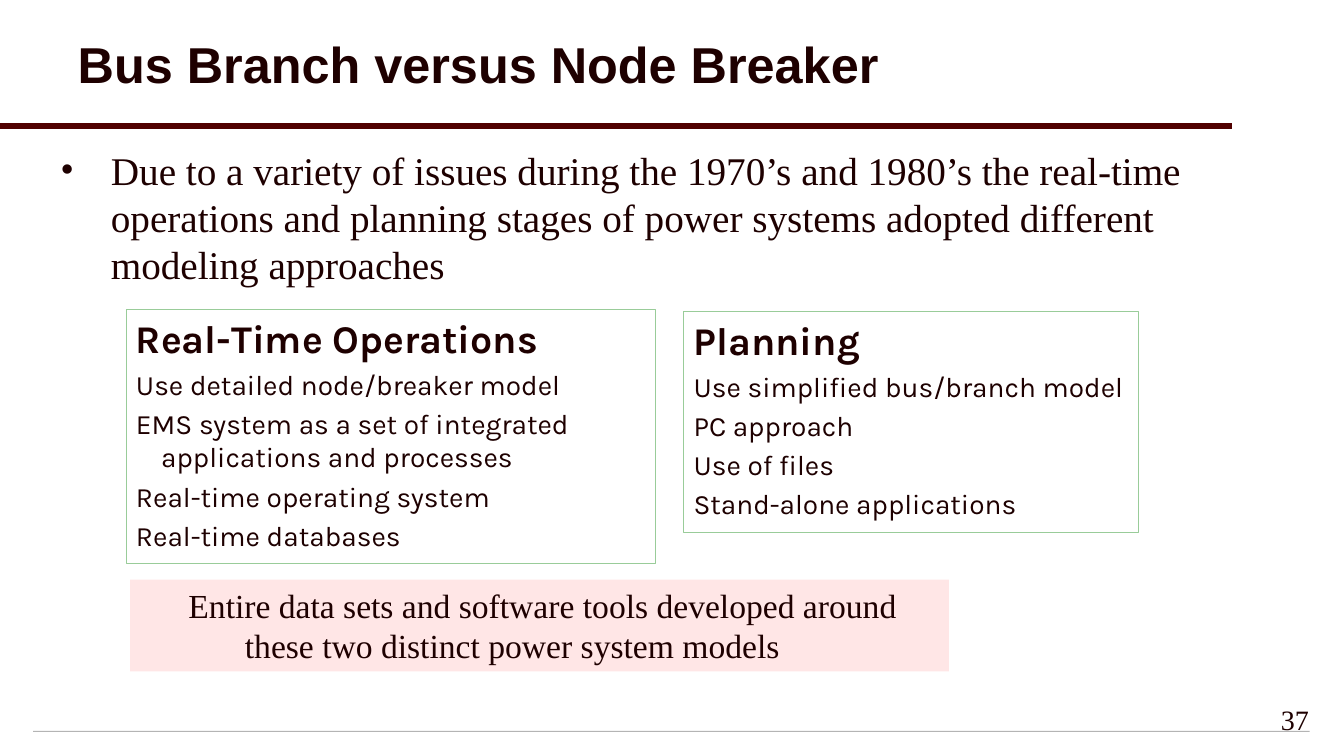
from lxml import etree
from pptx import Presentation
from pptx.dml.color import RGBColor
from pptx.enum.shapes import MSO_CONNECTOR, MSO_SHAPE
from pptx.enum.text import MSO_ANCHOR, MSO_AUTO_SIZE, PP_ALIGN
from pptx.oxml.ns import qn
from pptx.util import Inches, Pt

RECTANGLE = MSO_SHAPE.RECTANGLE
STRAIGHT = MSO_CONNECTOR.STRAIGHT
TOP, MIDDLE = MSO_ANCHOR.TOP, MSO_ANCHOR.MIDDLE
LEFT, RIGHT = PP_ALIGN.LEFT, PP_ALIGN.RIGHT
NO_AUTOFIT = MSO_AUTO_SIZE.NONE

WIDTH, HEIGHT = 13.33, 7.5
INK, MAROON, GREEN, PINK, GREY = "1E0000", "500000", "99CC99", "FFE6E6", "B4B4B4"
SERIF, SANS, CARD_FONT = "Times New Roman", "Arial", "Karla"

OPERATIONS = [
    "Real-Time Operations",
    "Use detailed node/breaker model",
    "EMS system as a set of integrated applications and processes",
    "Real-time operating system",
    "Real-time databases",
]
PLANNING = [
    "Planning",
    "Use simplified bus/branch model",
    "PC approach",
    "Use of files",
    "Stand-alone applications",
]


def color(value):
    return RGBColor.from_string(value)


def place(shape, left, top, width, height):
    shape.left, shape.top = Inches(left), Inches(top)
    shape.width, shape.height = Inches(width), Inches(height)


def prepare_frame(shape, anchor=TOP):
    frame = shape.text_frame
    frame.word_wrap = True
    frame.auto_size = NO_AUTOFIT
    frame.vertical_anchor = anchor
    return frame


def write(paragraph, text, font, size, bold=False, align=LEFT, margin=0, hanging=0,
          before=0, spacing=1.0, bullet=None):
    """Fill one paragraph; margin and hanging are in inches, before in points."""
    paragraph.text = text
    properties = paragraph._p.get_or_add_pPr()
    properties.set("marL", str(Inches(margin)))
    properties.set("indent", str(Inches(-hanging)))
    if bullet:
        bullet_font = etree.SubElement(properties, qn("a:buFont"))
        bullet_font.set("typeface", SERIF)
        etree.SubElement(properties, qn("a:buChar")).set("char", bullet)
    else:
        etree.SubElement(properties, qn("a:buNone"))
    paragraph.alignment = align
    paragraph.space_before = Pt(before)
    paragraph.line_spacing = spacing
    paragraph.font.name = font
    paragraph.font.size = Pt(size)
    paragraph.font.bold = bold
    paragraph.font.color.rgb = color(INK)


def add_box(page, area, fill=None, line=None):
    box = page.shapes.add_shape(RECTANGLE, *map(Inches, area))
    box.shadow.inherit = False
    if fill:
        box.fill.solid()
        box.fill.fore_color.rgb = color(fill)
    else:
        box.fill.background()
    if line:
        box.line.color.rgb = color(line)
        box.line.width = Pt(0.75)
    else:
        box.line.fill.background()
    return box


def add_rule(page, top, right, line, width):
    rule = page.shapes.add_connector(
        STRAIGHT, 0, Inches(top), Inches(right), Inches(top))
    rule.line.color.rgb = color(line)
    rule.line.width = Pt(width)
    etree.SubElement(rule._element.spPr, qn("a:effectLst"))


def add_card(page, area, lines):
    frame = prepare_frame(add_box(page, area, line=GREEN))
    heading, *items = lines
    write(frame.paragraphs[0], heading, CARD_FONT, 28, bold=True)
    for item in items:
        write(frame.add_paragraph(), item, CARD_FONT, 20,
              margin=0.25, hanging=0.25, before=4)


def main():
    deck = Presentation()
    deck.slide_width, deck.slide_height = Inches(WIDTH), Inches(HEIGHT)
    page = deck.slides.add_slide(deck.slide_layouts[1])
    title, body = page.placeholders

    # Rules above the content and at the foot
    add_box(page, (0.33, 7.25, 12.66, 0.01), fill=GREY)
    add_rule(page, 1.25, 12.22, MAROON, 4)

    # Title and introduction
    place(title, 0.67, 0.08, 12.22, 1.17)
    write(prepare_frame(title, MIDDLE).paragraphs[0], "Bus Branch versus Node Breaker",
          SANS, 36, bold=True, spacing=0.9)
    place(body, 0.5, 1.4, 11.58, 1.77)
    write(prepare_frame(body).paragraphs[0],
          "Due to a variety of issues during the 1970’s and 1980’s the real-time "
          "operations and planning stages of power systems adopted different "
          "modeling approaches",
          SERIF, 28, margin=0.5, hanging=0.5, bullet="•")

    # The two modeling approaches
    add_card(page, (6.78, 3.09, 4.51, 2.19), PLANNING)
    add_card(page, (1.25, 3.07, 5.25, 2.52), OPERATIONS)

    # Conclusion
    banner = add_box(page, (1.29, 5.75, 8.12, 0.91), fill=PINK)
    write(prepare_frame(banner).paragraphs[0],
          "Entire data sets and software tools developed around these two "
          "distinct power system models",
          SERIF, 24, margin=1.04, hanging=0.56)

    # Page number
    number = page.shapes.add_textbox(*map(Inches, (11, 6.92, 2.08, 0.5)))
    write(prepare_frame(number).paragraphs[0], "37", SERIF, 20, align=RIGHT)

    deck.save("out.pptx")


if __name__ == "__main__":
    main()
